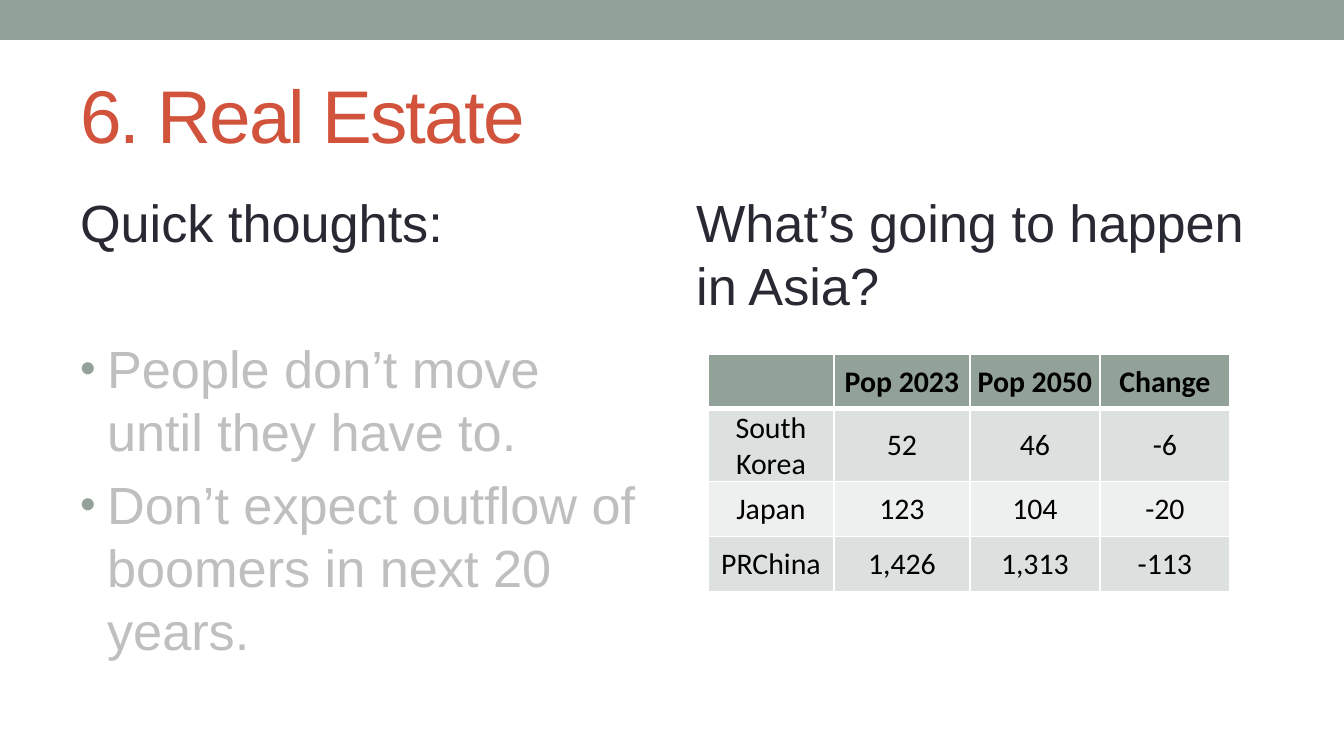
from pptx import Presentation
from pptx.dml.color import RGBColor as RGB
from pptx.enum.shapes import MSO_SHAPE as Shape
from pptx.enum.text import MSO_ANCHOR as Anchor, PP_ALIGN as Align
from pptx.oxml import parse_xml
from pptx.oxml.ns import nsdecls
from pptx.util import Pt

PX = 914400 / 134.4
COLORS = {
    "sage": "93A299", "title": "D2533C", "ink": "292934", "muted": "BFBFBF",
    "odd": "DCE0DE", "even": "EEF0EF", "black": "000000", "white": "FFFFFF",
}


def px(*lengths):
    """Turn pixel lengths into a list of EMU."""
    return [round(length * PX) for length in lengths]


def write(para, text, color, **font_values):
    """Add a coloured span to a paragraph and set its font attributes."""
    span = para.add_run()
    span.text = text
    span.font.color.rgb = RGB.from_string(COLORS[color])
    for name, value in font_values.items():
        setattr(span.font, name, value)
    return span


deck = Presentation()
deck.slide_width, deck.slide_height = px(1344, 756)
slide = deck.slides.add_slide(deck.slide_layouts[6])

# Top band
band = slide.shapes.add_shape(Shape.RECTANGLE, *px(0, 0, 1344, 40))
band.shadow.inherit = False
band.fill.solid()
band.fill.fore_color.rgb = RGB.from_string(COLORS["sage"])
band.line.fill.background()

# Title and the two columns
# Each paragraph: text, colour, size, space before, bulleted
boxes = [
    ((67, 59, 1210, 109), Anchor.MIDDLE, [("6. Real Estate", "title", 40, 0, False)]),
    ((683, 184, 594, 520), Anchor.TOP,
     [("What’s going to happen in Asia?", "ink", 28, 5.6, False)]),
    ((67, 184, 594, 520), Anchor.TOP, [
        ("Quick thoughts:", "ink", 28, 5.6, False),
        ("People don’t move until they have to.", "muted", 28, 44.6, True),
        ("Don’t expect outflow of boomers in next 20 years.", "muted", 28, 5.6, True),
    ]),
]
bullet_indent = px(27)[0]
bullet_parts = [
    f'<a:buClr {nsdecls("a")}><a:srgbClr val="{COLORS["sage"]}"/></a:buClr>',
    f'<a:buSzPct {nsdecls("a")} val="85000"/>',
    f'<a:buFont {nsdecls("a")} typeface="Arial"/>',
    f'<a:buChar {nsdecls("a")} char="•"/>',
]
for place, anchor, paragraphs in boxes:
    frame = slide.shapes.add_textbox(*px(*place)).text_frame
    frame.word_wrap = True
    frame.vertical_anchor = anchor
    for index, (text, color, size, before, bulleted) in enumerate(paragraphs):
        para = frame.add_paragraph() if index else frame.paragraphs[0]
        para.space_before = Pt(before)
        span = write(para, text, color, name="Arial", size=Pt(size))
        if color == "title":
            span._r.get_or_add_rPr().set("spc", "-100")
        if bulleted:
            properties = para._p.get_or_add_pPr()
            properties.set("marL", str(bullet_indent))
            properties.set("indent", str(-bullet_indent))
            for part in bullet_parts:
                properties.append(parse_xml(part))

# Population table
population = [
    ["", "Pop 2023", "Pop 2050", "Change"],
    ["South Korea", "52", "46", "-6"],
    ["Japan", "123", "104", "-20"],
    ["PRChina", "1,426", "1,313", "-113"],
]
column_widths = px(126, 136, 130, 130)
row_height = px(55)[0]
cell_format = {"vertical_anchor": Anchor.MIDDLE, "margin_bottom": 0}
cell_format |= dict.fromkeys(("margin_left", "margin_top", "margin_right"), px(1)[0])

table = slide.shapes.add_table(4, 4, *px(708, 354, 522, 220)).table
for column, width in zip(table.columns, column_widths):
    column.width = width
for row_index, values in enumerate(population):
    table.rows[row_index].height = row_height
    header = row_index == 0
    fill = "sage" if header else ("odd" if row_index % 2 else "even")
    borders = {"L": 1, "R": 1, "T": 3 if row_index == 1 else 1, "B": 3 if header else 1}
    for column_index, value in enumerate(values):
        cell = table.cell(row_index, column_index)
        for name, setting in cell_format.items():
            setattr(cell, name, setting)
        for side, points in borders.items():
            cell._tc.get_or_add_tcPr().append(parse_xml(
                f'<a:ln{side} {nsdecls("a")} w="{Pt(points)}"><a:solidFill>'
                f'<a:srgbClr val="{COLORS["white"]}"/></a:solidFill></a:ln{side}>'))
        cell.fill.solid()
        cell.fill.fore_color.rgb = RGB.from_string(COLORS[fill])
        if value:
            para = cell.text_frame.paragraphs[0]
            para.alignment = Align.CENTER
            write(para, value, "black", name="Calibri", size=Pt(16), bold=header)

deck.save("out.pptx")
